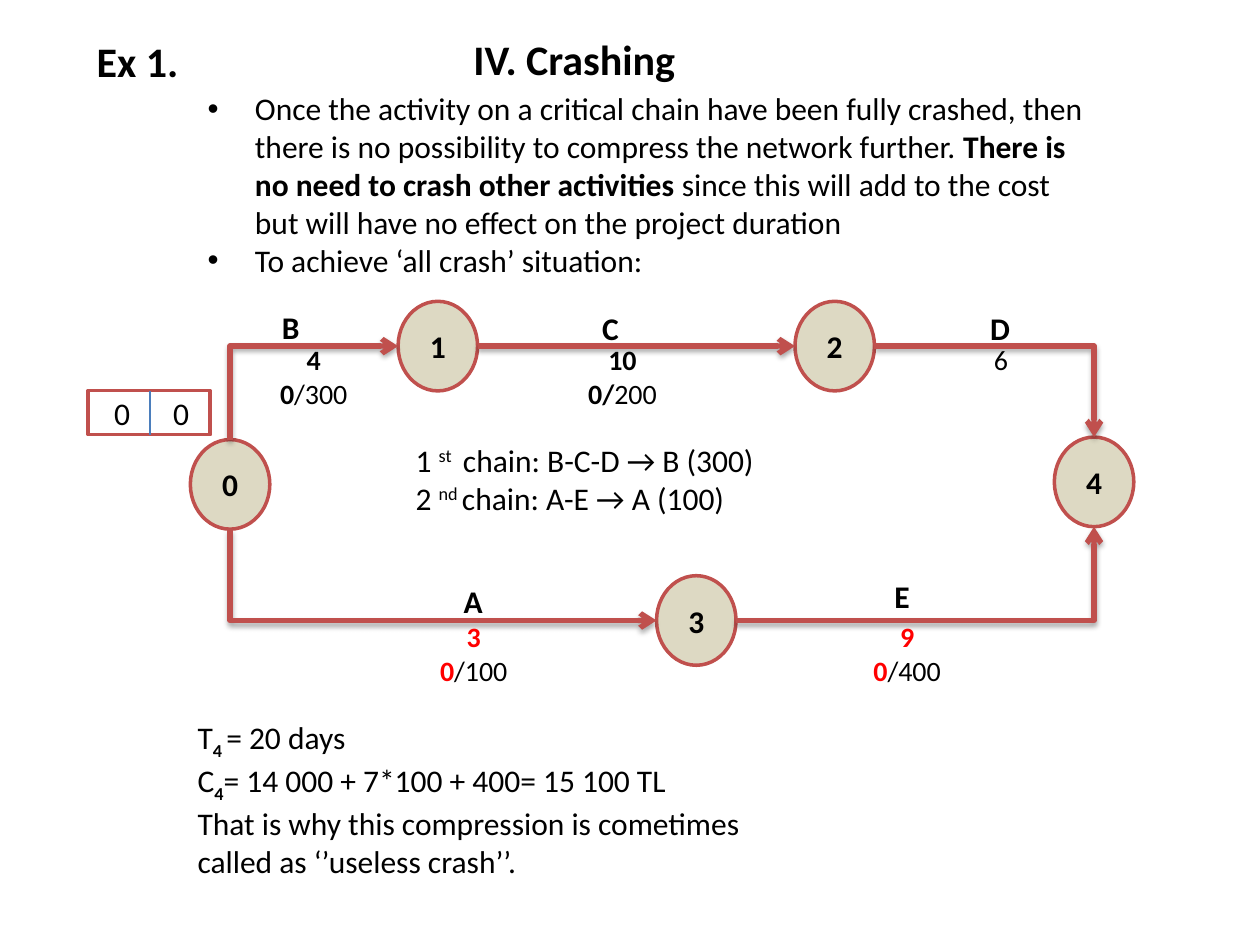
"""Build the slide on crashing a project network."""
from lxml import etree
from pptx import Presentation
from pptx import util as u
from pptx.dml.color import RGBColor
from pptx.enum import shapes, text
from pptx.oxml import parse_xml
from pptx.oxml.ns import nsdecls, qn

Pt = u.Pt
BLACK = RGBColor(0x00, 0x00, 0x00)
RED = RGBColor(0xFF, 0x00, 0x00)
WHITE = RGBColor(0xFF, 0xFF, 0xFF)
BEIGE = RGBColor(0xDD, 0xD9, 0xC3)
BRICK = RGBColor(0xC0, 0x50, 0x4D)
BLUE = RGBColor(0x4B, 0x7E, 0xBC)
BOLD = {"bold": True}
SUBSCRIPT = {"bold": True, "baseline": -25000}
SUPERSCRIPT = {"baseline": 30000}

presentation = Presentation()
presentation.slide_width, presentation.slide_height = Pt(720), Pt(540)
slide = presentation.slides.add_slide(presentation.slide_layouts[6])


def write(frame, paragraphs, size=18, bold=False, align=text.PP_ALIGN.LEFT, bullet=False):
    """Fill a frame with paragraphs, each a list of (text, format) runs."""
    frame.word_wrap = True
    for index, runs in enumerate(paragraphs):
        paragraph = frame.paragraphs[0] if index == 0 else frame.add_paragraph()
        paragraph.alignment = align
        if bullet:
            properties = paragraph._p.get_or_add_pPr()
            properties.set("marL", str(Pt(27)))
            properties.set("indent", str(Pt(-27)))
            etree.SubElement(properties, qn("a:buFont")).set("typeface", "Arial")
            etree.SubElement(properties, qn("a:buChar")).set("char", "•")
        for content, style in runs:
            for number, line in enumerate(content.split("\n")):
                if number:
                    paragraph.add_line_break()
                run = paragraph.add_run()
                run.text = line
                run.font.name, run.font.size = "Calibri", Pt(size)
                run.font.bold = style.get("bold", bold)
                run.font.color.rgb = style.get("colour", BLACK)
                if "baseline" in style:
                    run._r.get_or_add_rPr().set("baseline", str(style["baseline"]))


def add_text(left, top, width, height, paragraphs, **style):
    """Place a text box and write its paragraphs."""
    box = slide.shapes.add_textbox(Pt(left), Pt(top), Pt(width), Pt(height))
    write(box.text_frame, paragraphs, **style)


add_text(105.8, 406.8, 360.7, 116.6, [
    [("T", {}), ("4 ", SUBSCRIPT), ("= 20 days", {})],
    [("C", {}), ("4", SUBSCRIPT), ("= 14 000 + 7*100 + 400= 15 100 TL", {})],
    [("That is why this compression is cometimes called as ‘’useless crash’’.", {})],
])
add_text(111.6, 47.5, 517, 116.6, [
    [("Once the activity on a critical chain have been fully crashed, then there is "
      "no possibility to compress the network further. ", {}),
     ("There is no need to crash other activities ", BOLD),
     ("since this will add to the cost but will have no effect on the project duration", {})],
    [("To achieve ‘all crash’ situation:", {})],
], bullet=True)
add_text(263.5, 15.8, 213.1, 36, [[("IV. Crashing", {})]], size=24, bold=True)
add_text(48.2, 16.6, 213.1, 36, [[("Ex 1.", {})]], size=24, bold=True)

NODE_WIDTH, NODE_HEIGHT = 45.4, 51.2
NODE_PLACES = [(108.8, 251.2), (227.5, 172.2), (454.3, 172.2), (375.2, 329), (602.5, 249.8)]
nodes = []
for name, (left, top) in enumerate(NODE_PLACES):
    node = slide.shapes.add_shape(shapes.MSO_SHAPE.OVAL, Pt(left), Pt(top),
                                  Pt(NODE_WIDTH), Pt(NODE_HEIGHT))
    node.shadow.inherit = False
    node.fill.solid()
    node.fill.fore_color.rgb = BEIGE
    node.line.color.rgb, node.line.width = BRICK, Pt(2)
    node.text_frame.vertical_anchor = text.MSO_ANCHOR.MIDDLE
    write(node.text_frame, [[(str(name), {})]], bold=True, align=text.PP_ALIGN.CENTER)
    nodes.append(node)

TOP, LEFT, BOTTOM, RIGHT = 0, 2, 4, 6
SITE_OFFSETS = {TOP: (0.5, 0), LEFT: (0, 0.5), BOTTOM: (0.5, 1), RIGHT: (1, 0.5)}
SHADOW = (f'<a:effectLst {nsdecls("a")}><a:outerShdw blurRad="{Pt(3.1)}" dist="{Pt(1.8)}" '
          'dir="5400000" rotWithShape="0"><a:srgbClr val="000000"><a:alpha val="35000"/>'
          '</a:srgbClr></a:outerShdw></a:effectLst>')
ACTIVITIES = [
    (1, RIGHT, 2, LEFT, "tailEnd"),
    (3, LEFT, 0, BOTTOM, "headEnd"),
    (1, LEFT, 0, TOP, "headEnd"),
    (3, RIGHT, 4, BOTTOM, "tailEnd"),
    (2, RIGHT, 4, TOP, "tailEnd"),
]
for first, first_site, last, last_site, arrow_end in ACTIVITIES:
    ends = [(first, first_site), (last, last_site)]
    points = [Pt(NODE_PLACES[node][axis] + SITE_OFFSETS[site][axis] * extent)
              for node, site in ends
              for axis, extent in enumerate((NODE_WIDTH, NODE_HEIGHT))]
    straight = last_site == LEFT
    kind = shapes.MSO_CONNECTOR.STRAIGHT if straight else shapes.MSO_CONNECTOR.ELBOW
    connector = slide.shapes.add_connector(kind, *points)
    connector.line.color.rgb, connector.line.width = BRICK, Pt(3)
    properties = connector._element.spPr
    if not straight:
        properties.find(qn("a:prstGeom")).set("prst", "bentConnector2")
    etree.SubElement(properties.find(qn("a:ln")), qn("a:" + arrow_end)).set("type", "arrow")
    properties.append(parse_xml(SHADOW))
    glue = connector._element.nvCxnSpPr.cNvCxnSpPr
    for tag, (node, site) in zip(("a:stCxn", "a:endCxn"), ends):
        joint = etree.SubElement(glue, qn(tag))
        joint.set("id", str(nodes[node].shape_id))
        joint.set("idx", str(site))

times = slide.shapes.add_shape(shapes.MSO_SHAPE.RECTANGLE, Pt(50.4), Pt(223.2), Pt(69.8), Pt(25.2))
times.shadow.inherit = False
times.fill.solid()
times.fill.fore_color.rgb = WHITE
times.line.color.rgb, times.line.width = BRICK, Pt(2)
times.text_frame.vertical_anchor = text.MSO_ANCHOR.MIDDLE
times.text_frame.margin_left = Pt(14.8)
write(times.text_frame, [[("0\t0", {})]])
tab_list = etree.SubElement(times.text_frame.paragraphs[0]._p.get_or_add_pPr(), qn("a:tabLst"))
tab = etree.SubElement(tab_list, qn("a:tab"))
tab.set("pos", str(Pt(33.7)))
tab.set("algn", "l")

divider = slide.shapes.add_connector(shapes.MSO_CONNECTOR.STRAIGHT,
                                     Pt(85.7), Pt(223.2), Pt(85.7), Pt(248.4))
divider.line.color.rgb, divider.line.width = BLUE, Pt(0.75)
etree.SubElement(divider._element.spPr, qn("a:effectLst"))

for name, left, top in [("B", 154, 172.2), ("E", 504, 326.2), ("D", 558.7, 172.8),
                        ("C", 337, 172.8), ("A", 257.8, 329)]:
    add_text(left, top, 38.2, 28.8, [[(name, {})]], bold=True)

for left, top, strong, cost, colour in [
    (142.6, 192.2, "4\n0", "/300", BLACK),
    (481.7, 350.6, "9\n0", "/400", RED),
    (234, 350.6, "3\n0", "/100", RED),
    (319, 192.2, "10\n0/", "200", BLACK),
]:
    add_text(left, top, 73.4, 46, [[(strong, {"bold": True, "colour": colour}), (cost, {})]],
             size=16, align=text.PP_ALIGN.CENTER)
add_text(560.9, 192.2, 30.2, 26.6, [[("6", {})]], size=16)

add_text(230.4, 248.4, 288.7, 72.7, [
    [("1 ", {}), ("st ", SUPERSCRIPT), (" chain: B-C-D → B (300)", {})],
    [("2 ", {}), ("nd ", SUPERSCRIPT), ("chain: A-E → A (100)", {})],
])

presentation.save("out.pptx")
